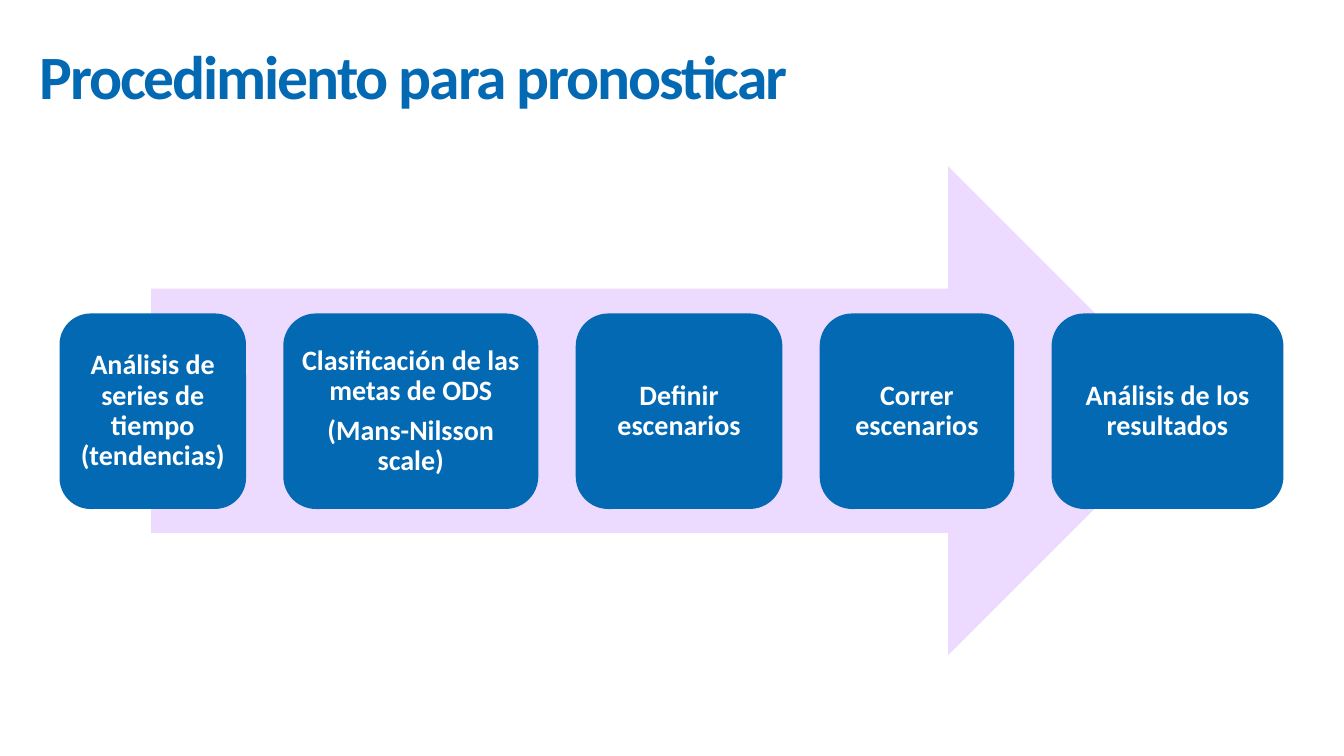
from pptx import Presentation
from pptx.dml.color import RGBColor as RGB
from pptx.enum.shapes import MSO_SHAPE as Shape
from pptx.enum.text import MSO_ANCHOR as Anchor, PP_ALIGN as Align
from pptx.oxml.xmlchemy import OxmlElement as Element
from pptx.util import Inches, Pt

BLUE, LILAC, WHITE = "0369B3", "DCB9FF", "FFFFFF"
LEFT, TOP, HIGH, GAP = 0.59, 3.11, 1.94, 0.37

# Width and paragraphs of each step
STEPS = [
    (1.85, "Análisis de series de tiempo (tendencias)"),
    (2.53, "Clasificación de las metas de ODS\n(Mans-Nilsson scale)"),
    (2.05, "Definir escenarios"),
    (1.93, "Correr escenarios"),
    (2.3, "Análisis de los resultados"),
]


def paint(fill, color):
    fill.solid()
    fill.fore_color.rgb = RGB.from_string(color)


def style(para, size, color):
    para.line_spacing = 0.9
    for run in para.runs:
        font = run.font
        font.name, font.size, font.bold = "Calibri", Pt(size), True
        font.color.rgb = RGB.from_string(color)


def add_title(slide, text):
    title = slide.shapes.title
    title.left, title.top = Inches(0.29), Inches(0.27)
    title.width, title.height = Inches(12.04), Inches(1.03)
    frame = title.text_frame
    frame.text = text
    frame.vertical_anchor = Anchor.MIDDLE
    para = frame.paragraphs[0]
    para.alignment = Align.LEFT
    style(para, 44, BLUE)
    # Tight letter spacing
    para.runs[0].font._element.set("spc", "-150")


def add_block(slide, kind, left, top, width, height, color):
    block = slide.shapes.add_shape(
        kind, Inches(left), Inches(top), Inches(width), Inches(height))
    block.shadow.inherit = False
    block.line.fill.background()
    paint(block.fill, color)
    return block


def add_arrow(slide):
    arrow = add_block(slide, Shape.RIGHT_ARROW, 1.5, 1.65, 10.33, 4.85, LILAC)
    # Half transparent fill
    alpha = Element("a:alpha")
    alpha.set("val", "50000")
    arrow.fill._xPr.solidFill.srgbClr.append(alpha)


def add_step(slide, left, width, text):
    step = add_block(
        slide, Shape.ROUNDED_RECTANGLE, left, TOP, width, HIGH, BLUE)
    frame = step.text_frame
    frame.text = text
    frame.word_wrap = True
    frame.vertical_anchor = Anchor.MIDDLE
    frame.margin_left = frame.margin_right = Inches(0.08)
    frame.margin_top = frame.margin_bottom = Inches(0.08)
    for para in frame.paragraphs:
        para.alignment = Align.CENTER
        para.space_after = Pt(7)
        style(para, 20, WHITE)


def main():
    deck = Presentation()
    deck.slide_width, deck.slide_height = Inches(13.33), Inches(7.5)
    slide = deck.slides.add_slide(deck.slide_layouts[5])
    paint(slide.background.fill, WHITE)

    add_title(slide, "Procedimiento para pronosticar")
    add_arrow(slide)

    # Steps from left to right
    left = LEFT
    for width, text in STEPS:
        add_step(slide, left, width, text)
        left += width + GAP

    deck.save("out.pptx")


if __name__ == "__main__":
    main()
